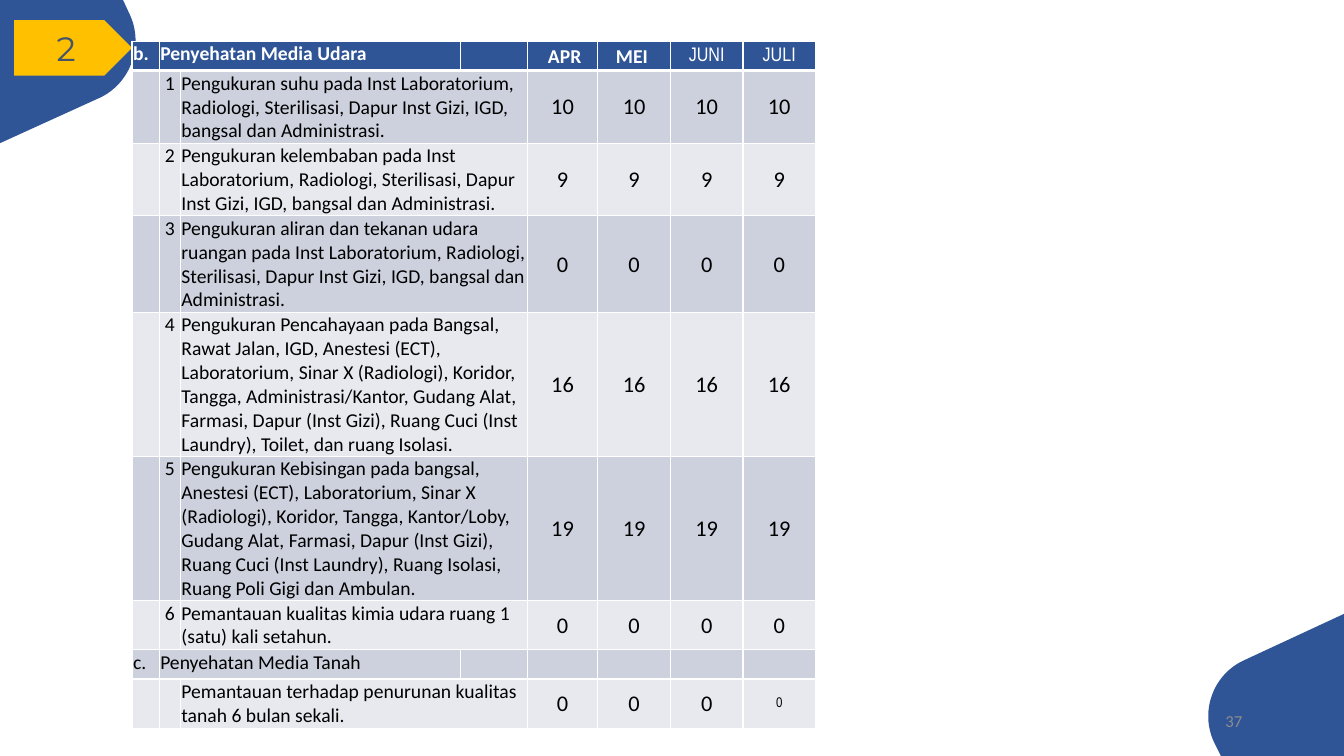
from lxml.etree import SubElement
from pptx import Presentation
from pptx.dml.color import RGBColor
from pptx.enum.shapes import MSO_SHAPE as Preset
from pptx.enum.text import MSO_ANCHOR as Anchor, PP_ALIGN as Align
from pptx.oxml import parse_xml
from pptx.oxml.ns import nsdecls, qn
from pptx.util import Inches, Pt

BLUE, GOLD, WHITE, BLACK = "2F5597", "FFC000", "FFFFFF", "000000"
SLATE, GREY = "44546A", "8C8C8C"
BANDS = ["E8E9EF", "CDD1DD"]


def color(value):
    return RGBColor.from_string(value)


def write(para, text, align, shade, **look):
    para.alignment = align
    span = para.add_run()
    span.text = text
    span.font.color.rgb = color(shade)
    for name, value in look.items():
        setattr(span.font, name, value)


deck = Presentation()
deck.slide_width, deck.slide_height = Inches(13.33), Inches(7.5)
page = deck.slides.add_slide(deck.slide_layouts[6])

corners = [
    ([(13.33, 7.5), (12.11, 7.5), (12.04, 7.36)],
     [(12.04, 7.36), (11.9, 7.06), (12.03, 6.69), (12.34, 6.55)],
     [(13.33, 6.09)]),
    ([(0, 0), (1.22, 0), (1.29, 0.15)],
     [(1.29, 0.15), (1.43, 0.46), (1.29, 0.83), (0.99, 0.97)],
     [(0, 1.42)]),
]
steps = 24
for before, curve, after in corners:
    bend = []
    for step in range(1, steps + 1):
        t = step / steps
        weights = [(1 - t) ** 3, 3 * t * (1 - t) ** 2, 3 * t * t * (1 - t), t ** 3]
        bend.append([sum(w * point[axis] for w, point in zip(weights, curve)) for axis in (0, 1)])
    points = [(Inches(x), Inches(y)) for x, y in before + bend + after]
    builder = page.shapes.build_freeform(*points[0])
    builder.add_line_segments(points[1:], close=True)
    corner = builder.convert_to_shape()
    corner.shadow.inherit = False
    corner.fill.solid()
    corner.fill.fore_color.rgb = color(BLUE)
    corner.line.fill.background()

tag = page.shapes.add_shape(Preset.PENTAGON, Inches(0.14), Inches(0.2), Inches(1.17), Inches(0.55))
tag.shadow.inherit = False
tag.fill.solid()
tag.fill.fore_color.rgb = color(GOLD)
tag.line.fill.background()
tag.text_frame.vertical_anchor = Anchor.MIDDLE
write(tag.text_frame.paragraphs[0], "2", Align.CENTER, SLATE, size=Pt(24.1), name="Montserrat")

rows = [
    (0.29, "b.", "", "Penyehatan Media Udara", [" APR", "MEI ", "JUNI", "JULI"]),
    (0.72, "", "1", "Pengukuran suhu pada Inst Laboratorium, Radiologi, Sterilisasi, Dapur Inst Gizi, "
     "IGD, bangsal dan Administrasi.", ["10"] * 4),
    (0.72, "", "2", "Pengukuran kelembaban pada Inst Laboratorium, Radiologi, Sterilisasi, Dapur "
     "Inst Gizi, IGD, bangsal dan Administrasi.", ["9"] * 4),
    (0.72, "", "3", "Pengukuran aliran dan tekanan udara ruangan pada Inst Laboratorium, Radiologi, "
     "Sterilisasi, Dapur Inst Gizi, IGD, bangsal dan Administrasi.", ["0"] * 4),
    (1.2, "", "4", "Pengukuran Pencahayaan pada Bangsal, Rawat Jalan, IGD, Anestesi (ECT), "
     "Laboratorium, Sinar X (Radiologi), Koridor, Tangga, Administrasi/Kantor, Gudang Alat, "
     "Farmasi, Dapur (Inst Gizi), Ruang Cuci (Inst Laundry), Toilet, dan ruang Isolasi.", ["16"] * 4),
    (1.2, "", "5", "Pengukuran Kebisingan pada bangsal, Anestesi (ECT), Laboratorium, Sinar X "
     "(Radiologi), Koridor, Tangga, Kantor/Loby, Gudang Alat, Farmasi, Dapur (Inst Gizi), "
     "Ruang Cuci (Inst Laundry), Ruang Isolasi, Ruang Poli Gigi dan Ambulan.", ["19"] * 4),
    (0.49, "", "6", "Pemantauan kualitas kimia udara ruang 1 (satu) kali setahun.", ["0"] * 4),
    (0.29, "c.", "", "Penyehatan Media Tanah", [""] * 4),
    (0.49, "", "", "Pemantauan terhadap penurunan kualitas tanah 6 bulan sekali.", ["0"] * 4),
]
widths = [0.27, 0.21, 2.78, 0.66, 0.7, 0.72, 0.72, 0.72]
margins = {"margin_left": Inches(0.01), "margin_top": Inches(0.01),
           "margin_right": Inches(0.01), "margin_bottom": 0}

grid = page.shapes.add_table(len(rows), len(widths), Inches(1.31), Inches(0.41),
                             Inches(sum(widths)), Inches(sum(row[0] for row in rows))).table
grid.horz_banding = False
for column, width in zip(grid.columns, widths):
    column.width = Inches(width)

for r, (height, letter, number, task, counts) in enumerate(rows):
    grid.rows[r].height = Inches(height)
    first = 1 if letter else 2
    grid.cell(r, first).merge(grid.cell(r, first + 1))
    texts = [letter, task, "", ""] if letter else ["", number, task, ""]
    for c, text in enumerate(texts + counts):
        cell = grid.cell(r, c)
        for name, value in margins.items():
            setattr(cell, name, value)
        cell.fill.solid()
        cell.fill.fore_color.rgb = color(BANDS[r % 2] if r else BLUE)
        edges = {"lnL": 1, "lnR": 1, "lnT": 3 if r == 1 else 1, "lnB": 1 if r else 3}
        for place, (edge, points) in enumerate(edges.items()):
            cell._tc.tcPr.insert(place, parse_xml(
                f'<a:{edge} {nsdecls("a")} w="{Pt(points)}"><a:solidFill>'
                f'<a:srgbClr val="{WHITE}"/></a:solidFill></a:{edge}>'))
        para = cell.text_frame.paragraphs[0]
        if not text:
            SubElement(para._p, qn("a:endParaRPr"), sz="1400")
            continue
        look = {"size": Pt(14), "name": "Calibri", "bold": r == 0}
        if c > 3:
            cell.vertical_anchor = Anchor.MIDDLE
            look["size"] = Pt(16 if r else 14)
        if text in ("JUNI", "JULI"):
            look.update(name="Arial Narrow", bold=False)
        if (r, c) == (len(rows) - 1, len(widths) - 1):
            look.update(name="Arial Narrow", size=Pt(10))
        centred = c > 3 or (c == 1 and not letter)
        write(para, text, Align.CENTER if centred else Align.LEFT, BLACK if r else WHITE, **look)

box = page.shapes.add_textbox(Inches(9.42), Inches(6.95), Inches(3), Inches(0.4))
box.text_frame.word_wrap = True
box.text_frame.vertical_anchor = Anchor.MIDDLE
write(box.text_frame.paragraphs[0], "37", Align.RIGHT, GREY, size=Pt(12), name="Calibri")

deck.save("out.pptx")
